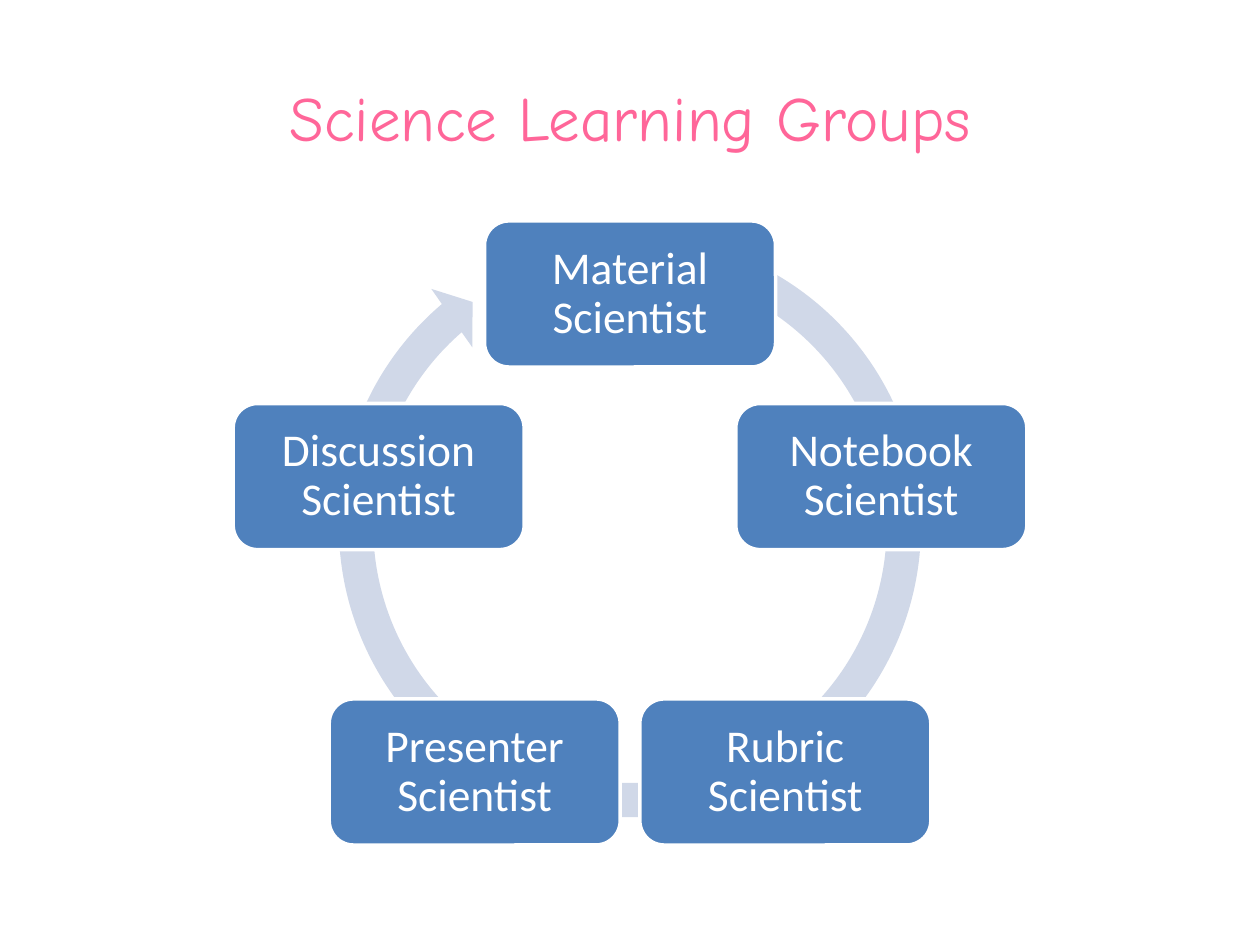
from math import cos, radians, sin

from pptx import Presentation
from pptx import util as u
from pptx.dml.color import RGBColor
from pptx.enum import shapes, text

COLORS = {"pink": "FF6699", "blue": "4F81BD", "pale": "D0D8E8", "white": "FFFFFF"}
ROLES = ["Material", "Notebook", "Rubric", "Presenter", "Discussion"]


def tint(name):
    return RGBColor.from_string(COLORS[name])


def write(shape, words, font="Calibri", size=26, color="white", inset=7.5, lead=0.9):
    frame = shape.text_frame
    frame.word_wrap = True
    frame.vertical_anchor = text.MSO_ANCHOR.MIDDLE
    frame.margin_left = frame.margin_right = u.Pt(inset)
    frame.margin_top = frame.margin_bottom = u.Pt(inset)
    para = frame.paragraphs[0]
    para.alignment = text.PP_ALIGN.CENTER
    para.line_spacing = lead
    run = para.add_run()
    run.text = words
    run.font.name = font
    run.font.size = u.Pt(size)
    run.font.color.rgb = tint(color)


class Deck:
    def __init__(self):
        self.show = Presentation()
        self.show.slide_width = u.Pt(720)
        self.show.slide_height = u.Pt(540)
        self.slide = self.show.slides.add_slide(self.show.slide_layouts[6])

    def title(self, words, *box):
        shape = self.slide.shapes.add_textbox(*map(u.Pt, box))
        write(shape, words, font="Comic Neue", size=36, color="pink", lead=1)

    def shape(self, kind, fill, *box):
        shape = self.slide.shapes.add_shape(kind, *map(u.Pt, box))
        shape.shadow.inherit = False
        shape.fill.solid()
        shape.fill.fore_color.rgb = tint(fill)
        return shape

    def ring(self, *box):
        arrow = self.shape(shapes.MSO_SHAPE.CIRCULAR_ARROW, "pale", *box)
        arrow.line.fill.background()
        for index, value in enumerate([0.0554, 3.307, 137.657, 173.922, 0.0576]):
            arrow.adjustments[index] = value

    def node(self, words, mid_x, mid_y, width=166.3, height=83.5):
        card = self.shape(
            shapes.MSO_SHAPE.ROUNDED_RECTANGLE, "blue",
            mid_x - width / 2, mid_y - height / 2, width, height,
        )
        card.line.color.rgb = tint("white")
        card.line.width = u.Pt(2)
        write(card, words)


def main():
    deck = Deck()
    deck.title("Science Learning Groups", 36, 21.6, 648, 90)
    deck.ring(183.1, 123.8, 353.8, 353.8)
    mid_x, mid_y, radius = 360, 319, 151
    for index, role in enumerate(ROLES):
        angle = radians(index * 360 / len(ROLES))
        deck.node(f"{role} Scientist", mid_x + radius * sin(angle), mid_y - radius * cos(angle))
    deck.show.save("out.pptx")


if __name__ == "__main__":
    main()
